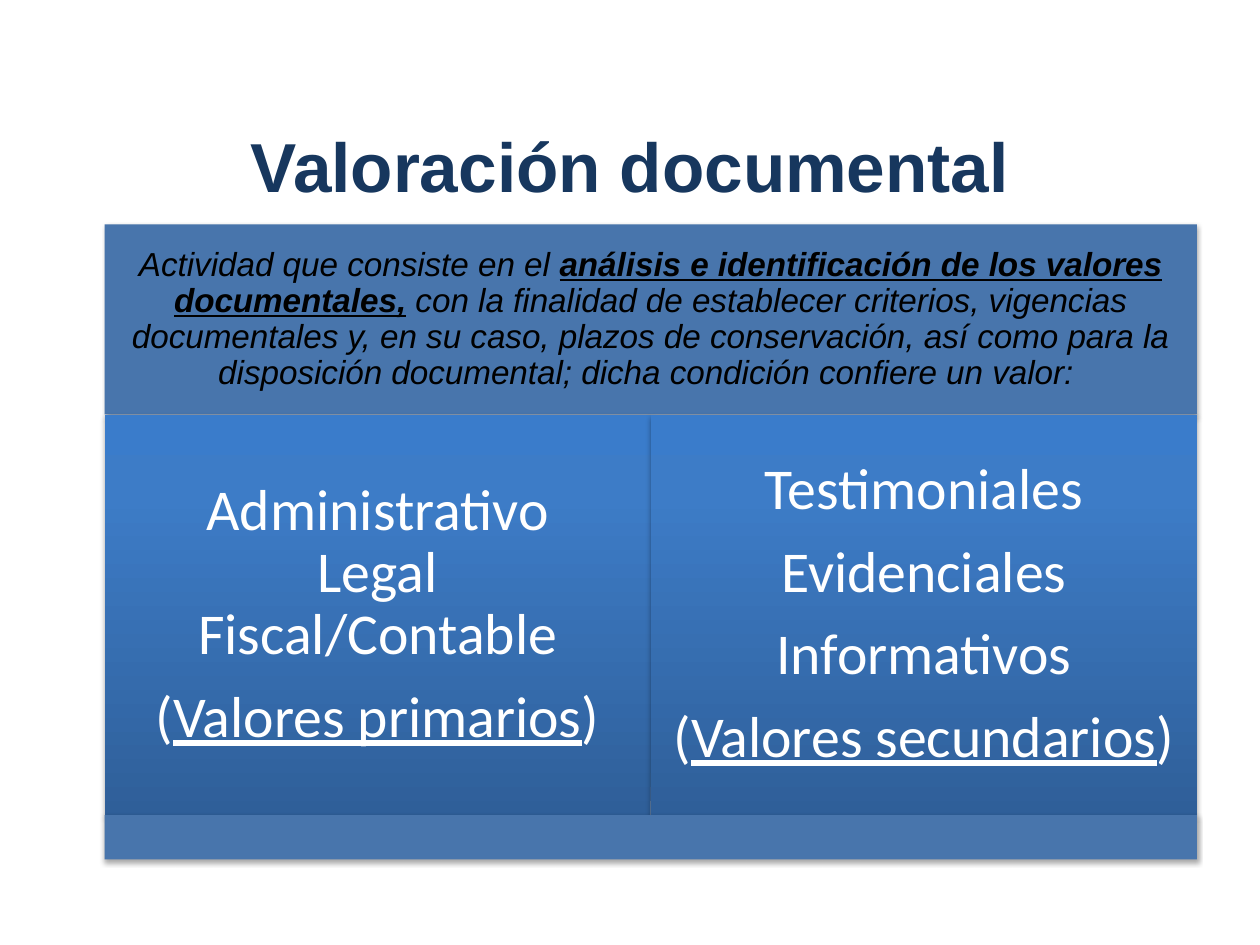
from pptx import Presentation
from pptx.dml.color import RGBColor
from pptx.enum.shapes import MSO_SHAPE as Shape
from pptx.enum.text import MSO_ANCHOR as Anchor, PP_ALIGN as Align
from pptx.oxml import parse_xml
from pptx.oxml.ns import nsdecls
from pptx.util import Inches, Pt

NAVY = RGBColor(0x17, 0x37, 0x5E)
STEEL = RGBColor(0x48, 0x75, 0xAC)
BLACK = RGBColor(0, 0, 0)
WHITE = RGBColor(255, 255, 255)
PANEL_STOPS = [
    (0, RGBColor(0x2F, 0x5F, 0x99)),
    (80, RGBColor(0x3D, 0x7C, 0xC7)),
    (100, RGBColor(0x3A, 0x7C, 0xCB)),
]

LEFT, WIDTH = 0.83, 8.67
HEADER_TOP, HEADER_HEIGHT = 1.78, 1.51
PANEL_TOP, PANEL_HEIGHT = HEADER_TOP + HEADER_HEIGHT, 3.18
FOOTER_TOP, FOOTER_HEIGHT = PANEL_TOP + PANEL_HEIGHT, 0.35

# Each paragraph is a list of (text, emphasised) runs.
DEFINITION = [[
    ("Actividad que consiste en el ", False),
    ("análisis e identificación de los valores documentales,", True),
    (" con la finalidad de establecer criterios, vigencias documentales y, "
     "en su caso, plazos de conservación, así como para la disposición "
     "documental; dicha condición confiere un valor: ", False),
]]
PRIMARY_VALUES = [
    [("Administrativo\nLegal\nFiscal/Contable", False)],
    [("(", False), ("Valores primarios", True), (")", False)],
]
SECONDARY_VALUES = [
    [("Testimoniales", False)],
    [("Evidenciales", False)],
    [("Informativos", False)],
    [("(", False), ("Valores secundarios", True), (") ", False)],
]


def add_title(slide, text):
    title = slide.shapes.title
    title.left, title.top = Inches(0.5), Inches(0.92)
    title.width, title.height = Inches(9), Inches(0.77)
    title.text_frame.vertical_anchor = Anchor.MIDDLE
    paragraph = title.text_frame.paragraphs[0]
    paragraph.alignment = Align.CENTER
    run = paragraph.add_run()
    run.text = text
    font = run.font
    font.name, font.size, font.bold = "Arial", Pt(39.6), True
    font.color.rgb = NAVY


def add_shadow(shape):
    shape._element.spPr.append(parse_xml(
        f'<a:effectLst {nsdecls("a")}>'
        '<a:outerShdw blurRad="40000" dist="23000" dir="5400000" rotWithShape="0">'
        '<a:srgbClr val="000000"><a:alpha val="35000"/></a:srgbClr>'
        '</a:outerShdw></a:effectLst>'))


def add_block(slide, left, top, width, height):
    """Add a steel-blue rectangle with a soft shadow and no outline."""
    shape = slide.shapes.add_shape(
        Shape.RECTANGLE, Inches(left), Inches(top), Inches(width), Inches(height))
    shape.fill.solid()
    shape.fill.fore_color.rgb = STEEL
    shape.line.fill.background()
    add_shadow(shape)
    return shape


def set_panel_gradient(shape):
    stops = "".join(
        f'<a:gs pos="{position * 1000}"><a:srgbClr val="{color}"/></a:gs>'
        for position, color in PANEL_STOPS)
    gradient = parse_xml(
        f'<a:gradFill {nsdecls("a")} rotWithShape="1"><a:gsLst>{stops}</a:gsLst>'
        '<a:lin ang="16200000" scaled="0"/></a:gradFill>')
    properties = shape._element.spPr
    properties.replace(properties.find("{*}solidFill"), gradient)


def add_text_run(paragraph, text, font_name, size, color):
    """Add one run, turning newlines into line breaks; return the fonts used."""
    fonts = []
    for index, line in enumerate(text.split("\n")):
        if index:
            paragraph.add_line_break()
        run = paragraph.add_run()
        run.text = line
        run.font.name, run.font.size = font_name, Pt(size)
        run.font.color.rgb = color
        fonts.append(run.font)
    return fonts


def fill_text(shape, paragraphs, font_name, size, color, inset, formal=False):
    """Write centred paragraphs; formal text is italic with bold emphasis."""
    frame = shape.text_frame
    frame.word_wrap = True
    frame.vertical_anchor = Anchor.MIDDLE
    frame.margin_left = frame.margin_right = Inches(inset)
    frame.margin_top = frame.margin_bottom = Inches(inset)
    for index, runs in enumerate(paragraphs):
        paragraph = frame.add_paragraph() if index else frame.paragraphs[0]
        paragraph.alignment = Align.CENTER
        paragraph.line_spacing = 0.9
        paragraph.space_after = Pt(round(size * 0.35, 1))
        for text, emphasised in runs:
            for font in add_text_run(paragraph, text, font_name, size, color):
                font.underline = emphasised
                font.italic = formal
                font.bold = formal and emphasised


def main():
    presentation = Presentation()
    presentation.slide_width, presentation.slide_height = Inches(10), Inches(7.5)
    slide = presentation.slides.add_slide(presentation.slide_layouts[5])

    add_title(slide, "Valoración documental")
    header = add_block(slide, LEFT, HEADER_TOP, WIDTH, HEADER_HEIGHT)
    fill_text(header, DEFINITION, "Arial", 19, BLACK, 0.08, formal=True)

    panel_width = WIDTH / 2
    for column, values in enumerate((PRIMARY_VALUES, SECONDARY_VALUES)):
        panel = add_block(slide, LEFT + column * panel_width, PANEL_TOP,
                          panel_width, PANEL_HEIGHT)
        set_panel_gradient(panel)
        fill_text(panel, values, "Calibri", 33, WHITE, 0.14)

    add_block(slide, LEFT, FOOTER_TOP, WIDTH, FOOTER_HEIGHT)
    presentation.save("out.pptx")


if __name__ == "__main__":
    main()
